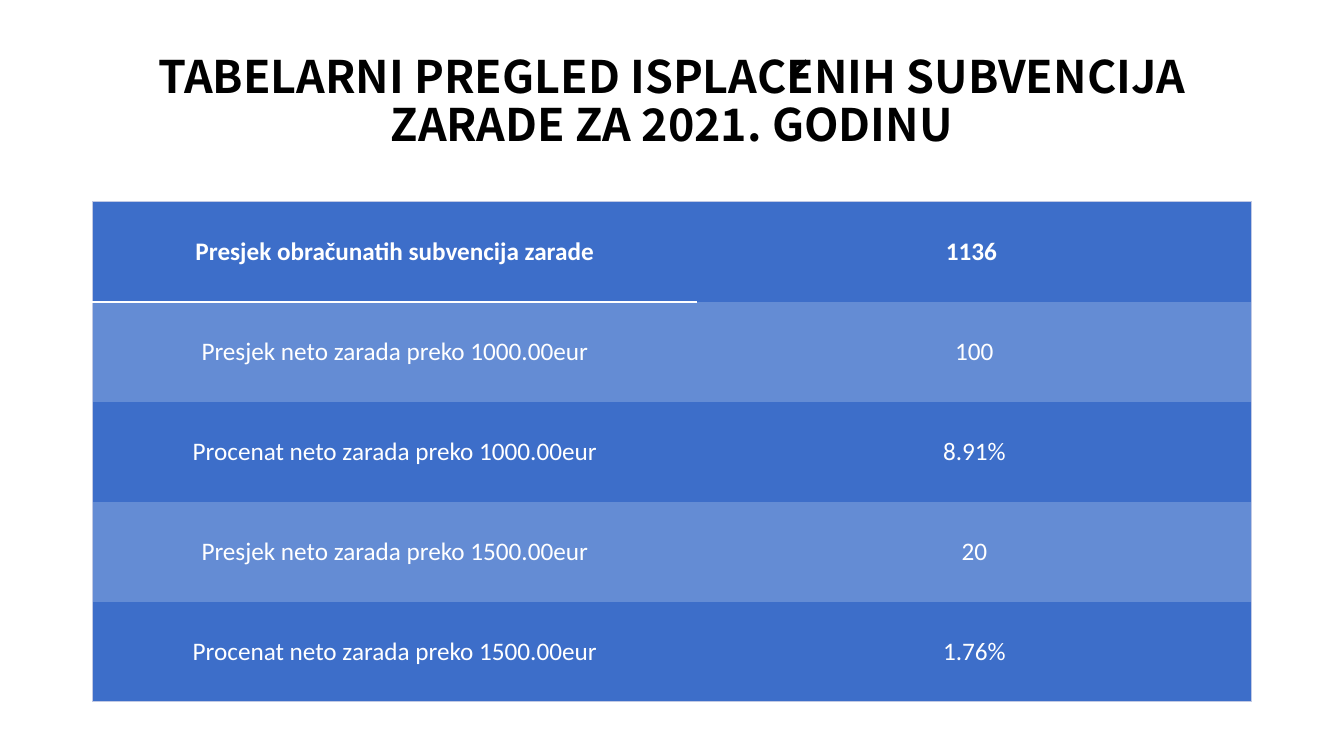
"""Builds the slide with the 2021 overview of paid wage subsidies."""
from lxml.etree import SubElement
from pptx import Presentation
from pptx.dml.color import RGBColor
from pptx.enum.text import MSO_ANCHOR, PP_ALIGN
from pptx.oxml.ns import qn
from pptx.util import Cm, Pt

COLORS = {
    "title": "000000",
    "text": "FFFFFF",
    "dark_row": "3D6EC9",
    "light_row": "648CD4",
    "outline": "C1C9E4",
    "header_rule": "FFFFFF",
}
ROWS = [
    ("Presjek obračunatih subvencija zarade", "1136 "),
    ("Presjek neto zarada preko 1000.00eur", "100"),
    ("Procenat neto zarada preko 1000.00eur", "8.91%"),
    ("Presjek neto zarada preko 1500.00eur", "20"),
    ("Procenat neto zarada preko 1500.00eur", "1.76%"),
]
COLUMN_WIDTHS = [15.24, 13.97]
ROW_HEIGHT = 2.52
LEFT, WIDTH = Cm(2.33), Cm(sum(COLUMN_WIDTHS))


def style_text(para, font_name, size, color, bold):
    """Center a paragraph and set its font."""
    para.alignment = PP_ALIGN.CENTER
    para.font.name = font_name
    para.font.size = Pt(size)
    para.font.bold = bold
    para.font.color.rgb = RGBColor.from_string(COLORS[color])


def add_border(cell, side, color, points):
    """Draw one side of a cell, or clear it when color is None."""
    line = SubElement(cell._tc.get_or_add_tcPr(), qn(f"a:ln{side}"), w=str(Pt(points)))
    if color is None:
        SubElement(line, qn("a:noFill"))
    else:
        fill = SubElement(line, qn("a:solidFill"))
        SubElement(fill, qn("a:srgbClr"), val=COLORS[color])


deck = Presentation()
deck.slide_width, deck.slide_height = Cm(33.87), Cm(19.05)
page = deck.slides.add_slide(deck.slide_layouts[6])

title_box = page.shapes.add_textbox(LEFT, Cm(0.48), WIDTH, Cm(4.22))
title_frame = title_box.text_frame
title_frame.word_wrap = True
title_frame.vertical_anchor = MSO_ANCHOR.MIDDLE
title = title_frame.paragraphs[0]
title.text = "TABELARNI PREGLED ISPLAĆENIH SUBVENCIJA ZARADE ZA 2021. GODINU"
title.line_spacing = 0.9
style_text(title, "Noto Sans CJK JP", 32, "title", True)

table = page.shapes.add_table(
    len(ROWS), len(COLUMN_WIDTHS), LEFT, Cm(5.08), WIDTH, Cm(ROW_HEIGHT * len(ROWS))
).table
for column, width in zip(table.columns, COLUMN_WIDTHS):
    column.width = Cm(width)

last_row, last_column = len(ROWS) - 1, len(COLUMN_WIDTHS) - 1
for row_index, values in enumerate(ROWS):
    table.rows[row_index].height = Cm(ROW_HEIGHT)
    for column_index, value in enumerate(values):
        cell = table.cell(row_index, column_index)
        cell.vertical_anchor = MSO_ANCHOR.MIDDLE
        para = cell.text_frame.paragraphs[0]
        para.text = value
        style_text(para, "Calibri", 18, "text", row_index == 0)

        outer_sides = {
            "L": column_index == 0,
            "R": column_index == last_column,
            "T": row_index == 0,
            "B": row_index == last_row,
        }
        for side, is_outer in outer_sides.items():
            if side == "B" and row_index == 0 and column_index == 0:
                add_border(cell, side, "header_rule", 1.5)
            else:
                add_border(cell, side, "outline" if is_outer else None, 0.5)

        cell.fill.solid()
        row_color = COLORS["light_row" if row_index % 2 else "dark_row"]
        cell.fill.fore_color.rgb = RGBColor.from_string(row_color)

deck.save("out.pptx")
